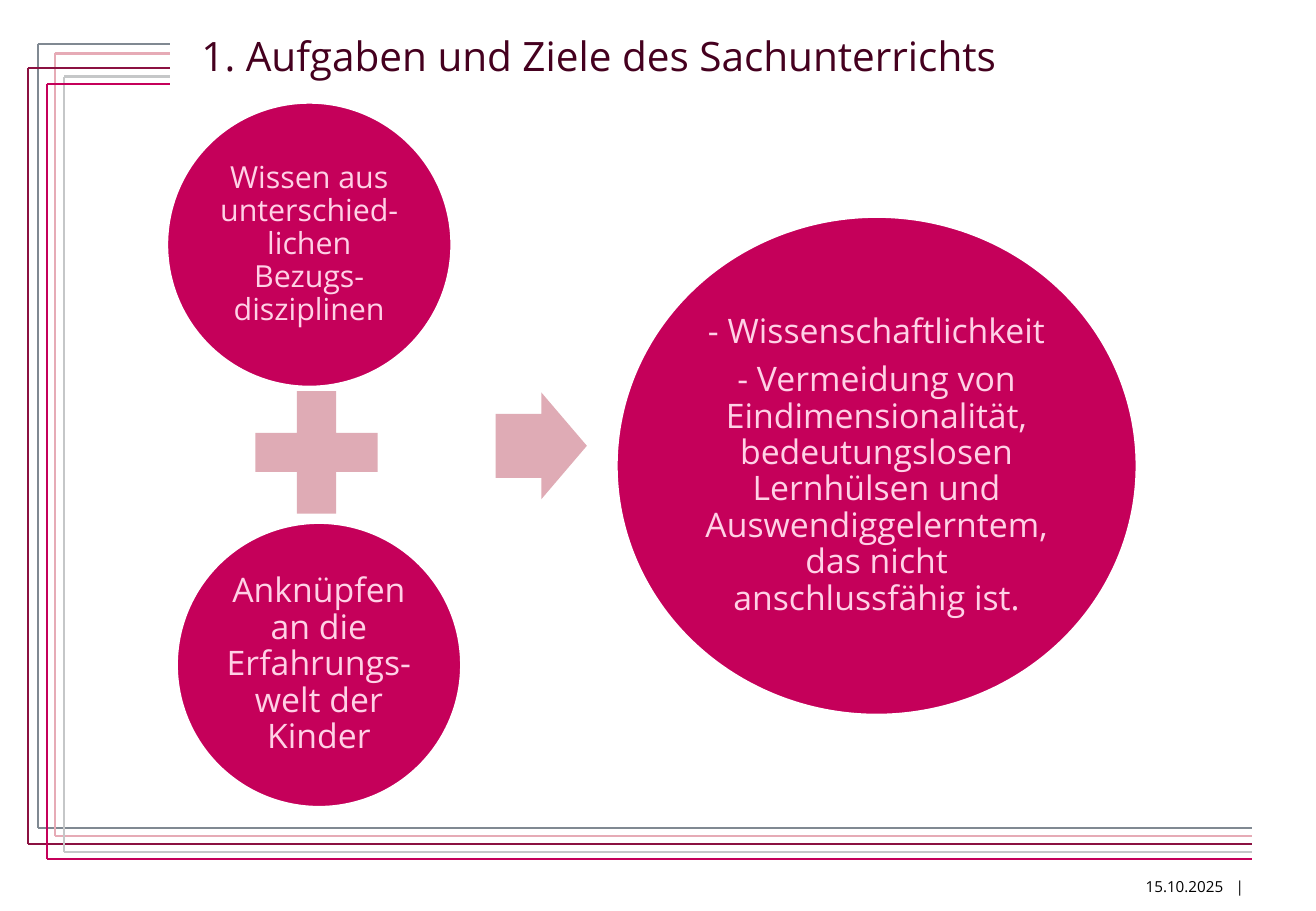
"""Build the slide on the tasks and aims of Sachunterricht."""
import pptx
import pptx.dml.color
import pptx.enum.shapes
import pptx.enum.text
import pptx.oxml.ns
import pptx.util
from lxml import etree

RGBColor = pptx.dml.color.RGBColor
Shape = pptx.enum.shapes.MSO_SHAPE
Align = pptx.enum.text.PP_ALIGN
Anchor = pptx.enum.text.MSO_ANCHOR

WIDTH = pptx.util.Inches(10.83)
HEIGHT = pptx.util.Inches(7.5)
FONT = "Open Sans"

WHITE = RGBColor(0xFF, 0xFF, 0xFF)
BLACK = RGBColor(0x00, 0x00, 0x00)
PLUM = RGBColor(0x45, 0x00, 0x1F)
MAGENTA = RGBColor(0xC5, 0x00, 0x5A)
WINE = RGBColor(0x8B, 0x11, 0x41)
PINK = RGBColor(0xE6, 0xAB, 0xB6)
ROSE = RGBColor(0xDF, 0xAB, 0xB5)
PALE_PINK = RGBColor(0xFF, 0xD1, 0xE6)
SLATE = RGBColor(0x80, 0x89, 0x92)
SILVER = RGBColor(0xC5, 0xC7, 0xC8)

TOP_END = 12.93
BOTTOM_END = 95.11
BRACKETS = [
    (SLATE, 2.86, 4.8, 90.93),
    (PINK, 4.16, 5.87, 91.73),
    (WINE, 2.12, 7.47, 92.67),
    (SILVER, 4.89, 8.4, 93.53),
    (MAGENTA, 3.6, 9.2, 94.27),
]

CIRCLES = [
    ((12.65, 11.2, 21.7, 31.33), 18,
     ["Wissen aus unterschied-lichen Bezugs-disziplinen"]),
    ((13.39, 57.33, 21.7, 31.33), 20,
     ["Anknüpfen an die Erfahrungs-welt der Kinder"]),
    ((46.81, 23.73, 39.61, 54.8), 20,
     ["- Wissenschaftlichkeit",
      "- Vermeidung von Eindimensionalität, bedeutungslosen Lernhülsen "
      "und Auswendiggelerntem, das nicht anschlussfähig ist."]),
]


def across(percent):
    """Turn a percentage of the slide's width into a length."""
    return round(WIDTH * percent / 100)


def down(percent):
    """Turn a percentage of the slide's height into a length."""
    return round(HEIGHT * percent / 100)


def place(box):
    """Turn left, top, width and height in percent into lengths."""
    left, top, width, height = box
    return across(left), down(top), across(width), down(height)


def format_runs(paragraph, size, color):
    """Set the font of every run in a paragraph."""
    for run in paragraph.runs:
        run.font.name = FONT
        run.font.size = pptx.util.Pt(size)
        run.font.color.rgb = color


def add_tab_stop(paragraph, position):
    """Give a paragraph one left tab stop."""
    properties = paragraph._p.get_or_add_pPr()
    tab_list = etree.SubElement(properties, pptx.oxml.ns.qn("a:tabLst"))
    etree.SubElement(tab_list, pptx.oxml.ns.qn("a:tab"),
                     pos=str(position), algn="l")


def add_line(slide, start, end, color):
    """Draw a thin line between two points given in percent."""
    connector = slide.shapes.add_connector(
        pptx.enum.shapes.MSO_CONNECTOR.STRAIGHT,
        across(start[0]), down(start[1]), across(end[0]), down(end[1]))
    connector.line.color.rgb = color
    connector.line.width = pptx.util.Pt(1.25)
    etree.SubElement(connector._element.spPr,
                     pptx.oxml.ns.qn("a:effectLst"))


def add_bracket(slide, color, left, top, bottom):
    """Draw one open bracket of the frame."""
    add_line(slide, (left, top), (TOP_END, top), color)
    add_line(slide, (left, top), (left, bottom), color)
    add_line(slide, (left, bottom), (BOTTOM_END, bottom), color)


def add_figure(slide, kind, box, color):
    """Add a filled preset shape without outline."""
    shape = slide.shapes.add_shape(kind, *place(box))
    shape.shadow.inherit = False
    shape.fill.solid()
    shape.fill.fore_color.rgb = color
    shape.line.fill.background()
    return shape


def add_circle(slide, box, size, texts):
    """Add a magenta ellipse with centred text."""
    circle = add_figure(slide, Shape.OVAL, box, MAGENTA)
    circle.line.color.rgb = WHITE
    circle.line.width = pptx.util.Pt(2)
    frame = circle.text_frame
    frame.word_wrap = True
    frame.vertical_anchor = Anchor.MIDDLE
    frame.margin_left = frame.margin_right = pptx.util.Inches(0.03)
    frame.margin_top = frame.margin_bottom = pptx.util.Inches(0.03)
    frame.text = "\n".join(texts)
    for paragraph in frame.paragraphs:
        paragraph.alignment = Align.CENTER
        paragraph.line_spacing = 0.9
        paragraph.space_after = pptx.util.Pt(size * 0.35)
        format_runs(paragraph, size, PALE_PINK)


def add_text(slide, box, text, size, color):
    """Add a text box with one paragraph and return its frame."""
    frame = slide.shapes.add_textbox(*place(box)).text_frame
    frame.word_wrap = True
    frame.text = text
    format_runs(frame.paragraphs[0], size, color)
    return frame


def add_date(slide):
    """Add the date and its closing bar at the foot of the slide."""
    frame = add_text(slide, (86.15, 95.87, 9.51, 2.4),
                     "15.10.2025\t|", 9, BLACK)
    frame.word_wrap = False
    frame.vertical_anchor = Anchor.BOTTOM
    frame.margin_top = frame.margin_bottom = 0
    frame.margin_right = pptx.util.Inches(0.04)
    add_tab_stop(frame.paragraphs[0], pptx.util.Inches(0.74))


def main():
    """Build and save the presentation."""
    presentation = pptx.Presentation()
    presentation.slide_width = WIDTH
    presentation.slide_height = HEIGHT
    slide = presentation.slides.add_slide(presentation.slide_layouts[6])
    for bracket in BRACKETS:
        add_bracket(slide, *bracket)
    add_date(slide)
    for circle in CIRCLES:
        add_circle(slide, *circle)
    add_figure(slide, Shape.MATH_PLUS, (17.73, 40.53, 12.65, 18.27), ROSE)
    arrow = add_figure(slide, Shape.RIGHT_ARROW,
                       (37.67, 43.07, 6.93, 11.73), ROSE)
    arrow.adjustments[0] = 0.6
    arrow.adjustments[1] = 0.5
    add_text(slide, (14.4, 2.8, 69.07, 7.33),
             "1. Aufgaben und Ziele des Sachunterrichts", 24, PLUM)
    presentation.save("out.pptx")


if __name__ == "__main__":
    main()
